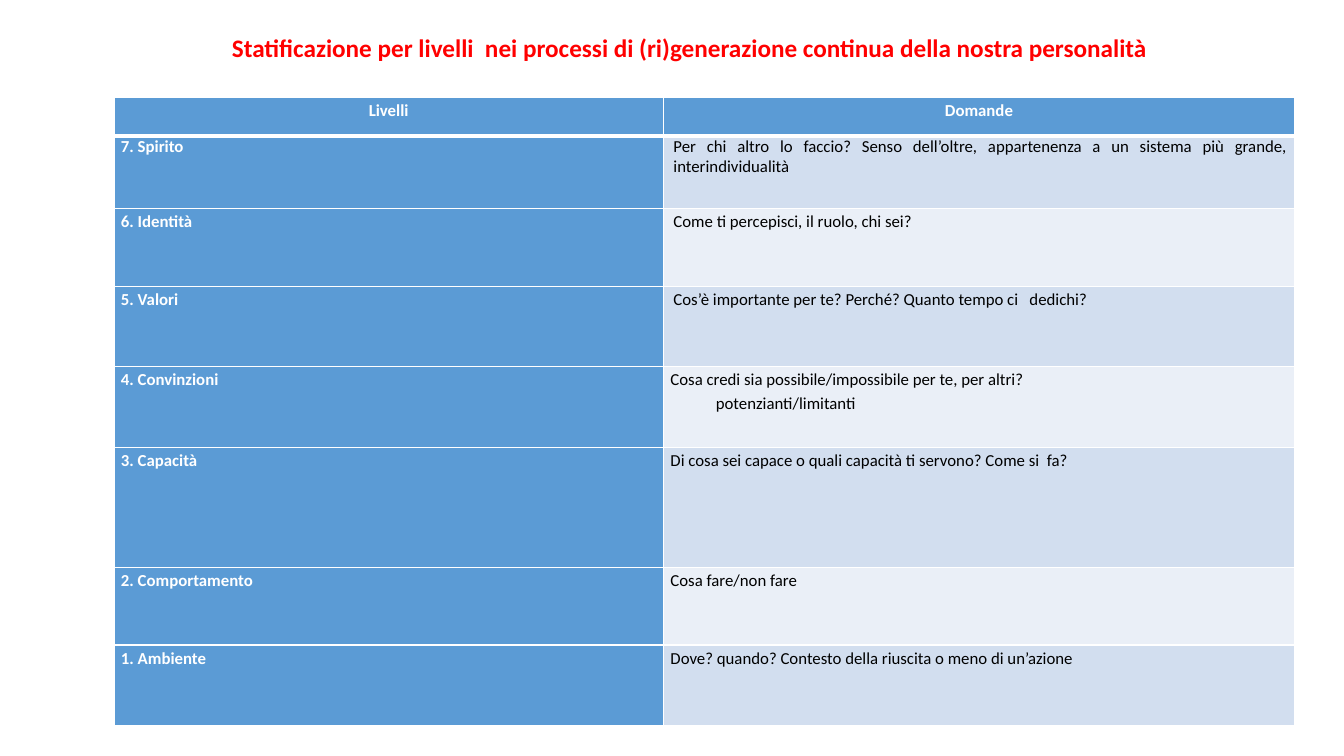
from dataclasses import dataclass
from typing import Any

from lxml.etree import SubElement
from pptx import Presentation
from pptx.dml.color import RGBColor
from pptx.enum.text import MSO_ANCHOR, MSO_AUTO_SIZE, PP_ALIGN
from pptx.oxml.ns import qn
from pptx.util import Emu, Pt

WHITE = RGBColor(0xFF, 0xFF, 0xFF)
BLACK = RGBColor(0x00, 0x00, 0x00)
RED = RGBColor(0xFF, 0x00, 0x00)
BLUE = RGBColor(0x5B, 0x9B, 0xD5)
BANDS = (RGBColor(0xD2, 0xDE, 0xEF), RGBColor(0xEA, 0xEF, 0xF7))

EMU_PER_PX = 9144  # 100 px to the inch
HEADER_HEIGHT = 38
COLUMN_WIDTHS = (545, 626)


def px(length: int) -> Emu:
    return Emu(length * EMU_PER_PX)


@dataclass(frozen=True)
class Level:
    name: str
    question: str
    height: int
    indent: int = 0
    spacing: float = 1.15
    detail: str = ""


LEVELS = (
    Level("7. Spirito",
          "Per chi altro lo faccio? Senso dell’oltre, appartenenza a un sistema "
          "più grande, interindividualità", 72, indent=3, spacing=1.0),
    Level("6. Identità", "Come ti percepisci, il ruolo, chi sei?", 77, indent=3),
    Level("5. Valori", "Cos’è importante per te? Perché? Quanto tempo ci   dedichi?",
          80, indent=3),
    Level("4. Convinzioni", "Cosa credi sia possibile/impossibile per te, per altri?",
          80, detail="potenzianti/limitanti"),
    Level("3. Capacità", "Di cosa sei capace o quali capacità ti servono? Come si  fa?",
          119),
    Level("2. Comportamento", "Cosa fare/non fare", 77),
    Level("1. Ambiente", "Dove? quando? Contesto della riuscita o meno di un’azione", 80),
)

TITLE_FONT = {"name": "Calibri", "size": Pt(18), "bold": True}
LABEL_FONT = {"name": "Calibri", "size": Pt(12), "bold": True}
QUESTION_FONT = {**LABEL_FONT, "bold": False}
CELL_MARGINS = {"margin_left": px(7), "margin_right": px(7),
                "margin_top": 0, "margin_bottom": 0}
TITLE_FRAME = {"word_wrap": True, "auto_size": MSO_AUTO_SIZE.NONE,
               "vertical_anchor": MSO_ANCHOR.TOP}
TITLE_BOX = {"left": px(220), "top": px(27), "width": px(1003), "height": px(40)}


def apply(target: Any, values: dict[str, Any]) -> None:
    for attribute, value in values.items():
        setattr(target, attribute, value)


def write(paragraph: Any, text: str, font: dict[str, Any], color: RGBColor,
          align: PP_ALIGN = PP_ALIGN.JUSTIFY, spacing: float = 1.0,
          indent: int = 0) -> None:
    apply(paragraph, {"alignment": align, "line_spacing": spacing})
    if indent:
        paragraph._p.get_or_add_pPr().set("marL", str(px(indent)))
    run = paragraph.add_run()
    run.text = text
    apply(run.font, font)
    run.font.color.rgb = color


def format_cell(cell: Any, fill: RGBColor, top: int = 1, bottom: int = 1) -> None:
    apply(cell, CELL_MARGINS)
    properties = cell._tc.get_or_add_tcPr()
    for side, width in (("L", 1), ("R", 1), ("T", top), ("B", bottom)):
        line = SubElement(properties, qn(f"a:ln{side}"), w=str(Pt(width)))
        SubElement(SubElement(line, qn("a:solidFill")), qn("a:srgbClr"), val=str(WHITE))
    cell.fill.solid()
    cell.fill.fore_color.rgb = fill


def add_title(slide: Any) -> None:
    title = slide.shapes.title
    apply(title, TITLE_BOX)
    apply(title.text_frame, TITLE_FRAME)
    write(title.text_frame.paragraphs[0],
          "Statificazione per livelli  nei processi di (ri)generazione continua "
          "della nostra personalità", TITLE_FONT, RED)


def add_levels_table(slide: Any) -> None:
    heights = [HEADER_HEIGHT, *(level.height for level in LEVELS)]
    table = slide.shapes.add_table(
        len(heights), len(COLUMN_WIDTHS), px(113), px(97),
        px(sum(COLUMN_WIDTHS)), px(sum(heights))).table
    for column, width in zip(table.columns, COLUMN_WIDTHS):
        column.width = px(width)
    for row, height in zip(table.rows, heights):
        row.height = px(height)

    # Header
    for column, heading in enumerate(("Livelli", "Domande")):
        cell = table.cell(0, column)
        format_cell(cell, BLUE, bottom=3)
        write(cell.text_frame.paragraphs[0], heading, LABEL_FONT, WHITE,
              PP_ALIGN.CENTER, 1.15)

    # Levels and their questions
    for row, level in enumerate(LEVELS, start=1):
        name, question = table.cell(row, 0), table.cell(row, 1)
        top = 3 if row == 1 else 1
        format_cell(name, BLUE, top)
        format_cell(question, BANDS[(row - 1) % 2], top)
        write(name.text_frame.paragraphs[0], level.name, LABEL_FONT, WHITE,
              spacing=level.spacing)
        write(question.text_frame.paragraphs[0], level.question, QUESTION_FONT, BLACK,
              spacing=level.spacing, indent=level.indent)
        if level.detail:
            write(question.text_frame.add_paragraph(), level.detail, QUESTION_FONT,
                  BLACK, spacing=level.spacing, indent=45)


def main() -> None:
    presentation = Presentation()
    apply(presentation, {"slide_width": px(1333), "slide_height": px(750)})
    slide = presentation.slides.add_slide(presentation.slide_layouts[5])
    add_title(slide)
    add_levels_table(slide)
    presentation.save("out.pptx")


if __name__ == "__main__":
    main()
